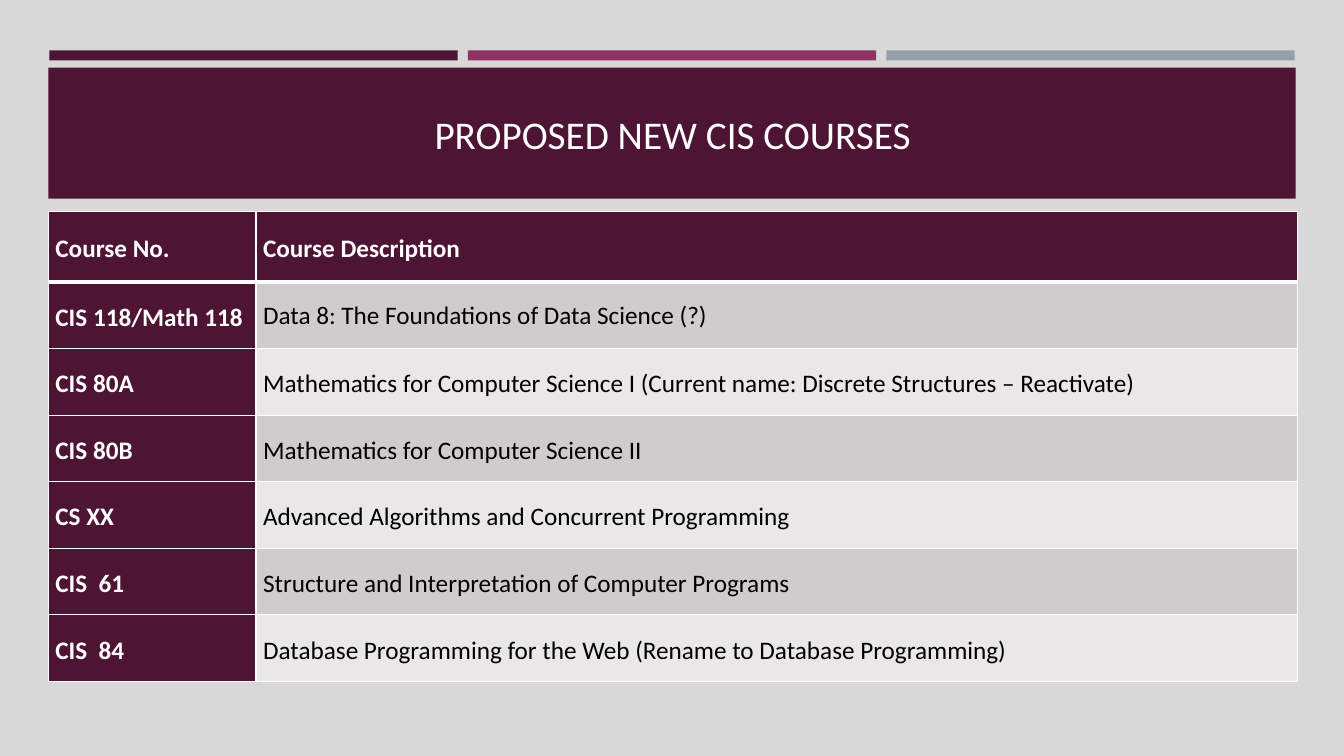
from dataclasses import dataclass

from lxml import etree
from pptx import Presentation
from pptx import util as u
from pptx.dml.color import RGBColor
from pptx.enum import shapes, text
from pptx.oxml import ns


@dataclass(frozen=True)
class Theme:
    font: str = "Calibri"
    title_size: int = 28
    table_size: int = 18
    background: RGBColor = RGBColor(0xD8, 0xD8, 0xD8)
    plum: RGBColor = RGBColor(0x4D, 0x14, 0x34)
    magenta: RGBColor = RGBColor(0x90, 0x31, 0x63)
    slate: RGBColor = RGBColor(0x96, 0x9F, 0xA7)
    dark_band: RGBColor = RGBColor(0xD0, 0xCC, 0xCE)
    light_band: RGBColor = RGBColor(0xE9, 0xE7, 0xE8)
    white: RGBColor = RGBColor(0xFF, 0xFF, 0xFF)
    black: RGBColor = RGBColor(0, 0, 0)


theme = Theme()


def write(frame, words, *, size, color, bold=False, align=None, spacing=None):
    paragraph = frame.paragraphs[0]
    paragraph.alignment = align
    paragraph.line_spacing = spacing
    run = paragraph.add_run()
    run.text = words
    run.font.name = theme.font
    run.font.size = u.Pt(size)
    run.font.bold = bold
    run.font.color.rgb = color


def add_borders(cell, **widths):
    properties = cell._tc.get_or_add_tcPr()
    for position, (side, points) in enumerate(widths.items()):
        line = etree.Element(ns.qn(f"a:ln{side}"), w=str(u.Pt(points)))
        fill = etree.SubElement(line, ns.qn("a:solidFill"))
        etree.SubElement(fill, ns.qn("a:srgbClr"), val=str(theme.white))
        properties.insert(position, line)


presentation = Presentation()
presentation.slide_width = u.Inches(13.33)
presentation.slide_height = u.Inches(7.5)
slide = presentation.slides.add_slide(presentation.slide_layouts[6])
slide.background.fill.solid()
slide.background.fill.fore_color.rgb = theme.background

# Three accent bars above the title banner
bars = [
    (0.49 + 4.15 * index, 0.5, 4.05, 0.1, color)
    for index, color in enumerate((theme.plum, theme.magenta, theme.slate))
]
banner = (0.48, 0.67, 12.37, 1.3, theme.plum)
for left, top, width, height, color in [*bars, banner]:
    shape = slide.shapes.add_shape(
        shapes.MSO_SHAPE.RECTANGLE,
        u.Inches(left), u.Inches(top), u.Inches(width), u.Inches(height),
    )
    shape.shadow.inherit = False
    shape.fill.solid()
    shape.fill.fore_color.rgb = color
    shape.line.fill.background()

# Title
title = slide.shapes.add_textbox(
    u.Inches(0.64), u.Inches(0.77), u.Inches(12.06), u.Inches(1.11)
).text_frame
title.word_wrap = True
title.vertical_anchor = text.MSO_ANCHOR.MIDDLE
write(title, "PROPOSED NEW CIS COURSES", size=theme.title_size,
      color=theme.white, align=text.PP_ALIGN.CENTER)

# Course table
courses = [
    ("Course No.", "Course Description"),
    ("CIS 118/Math 118", "Data 8: The Foundations of Data Science (?)"),
    ("CIS 80A", "Mathematics for Computer Science I (Current name: Discrete Structures – Reactivate)"),
    ("CIS 80B", "Mathematics for Computer Science II"),
    ("CS XX", "Advanced Algorithms and Concurrent Programming"),
    ("CIS  61", "Structure and Interpretation of Computer Programs"),
    ("CIS  84", "Database Programming for the Web (Rename to Database Programming)"),
]
table = slide.shapes.add_table(
    len(courses), 2, u.Inches(0.48), u.Inches(2.1), u.Inches(12.38), u.Inches(4.66)
).table
table.first_col = True
table.columns[0].width = u.Inches(2.06)
table.columns[1].width = u.Inches(10.33)

for row_number, course in enumerate(courses):
    table.rows[row_number].height = u.Inches(0.66 if row_number else 0.7)
    for column_number, words in enumerate(course):
        cell = table.cell(row_number, column_number)
        is_heading = row_number == 0 or column_number == 0
        band = theme.dark_band if row_number % 2 else theme.light_band
        cell.fill.solid()
        cell.fill.fore_color.rgb = theme.plum if is_heading else band
        cell.vertical_anchor = text.MSO_ANCHOR.MIDDLE
        cell.margin_left = cell.margin_right = u.Inches(0.07)
        cell.margin_top = cell.margin_bottom = 0
        # The first description is set at single line spacing
        spacing = None if (row_number, column_number) == (1, 1) else 1.15
        write(cell.text_frame, words, size=theme.table_size, bold=is_heading,
              color=theme.white if is_heading else theme.black, spacing=spacing)
        # A thick rule separates the header from the courses
        add_borders(cell, L=1, R=1, T=3 if row_number == 1 else 1,
                    B=3 if row_number == 0 else 1)

presentation.save("out.pptx")
